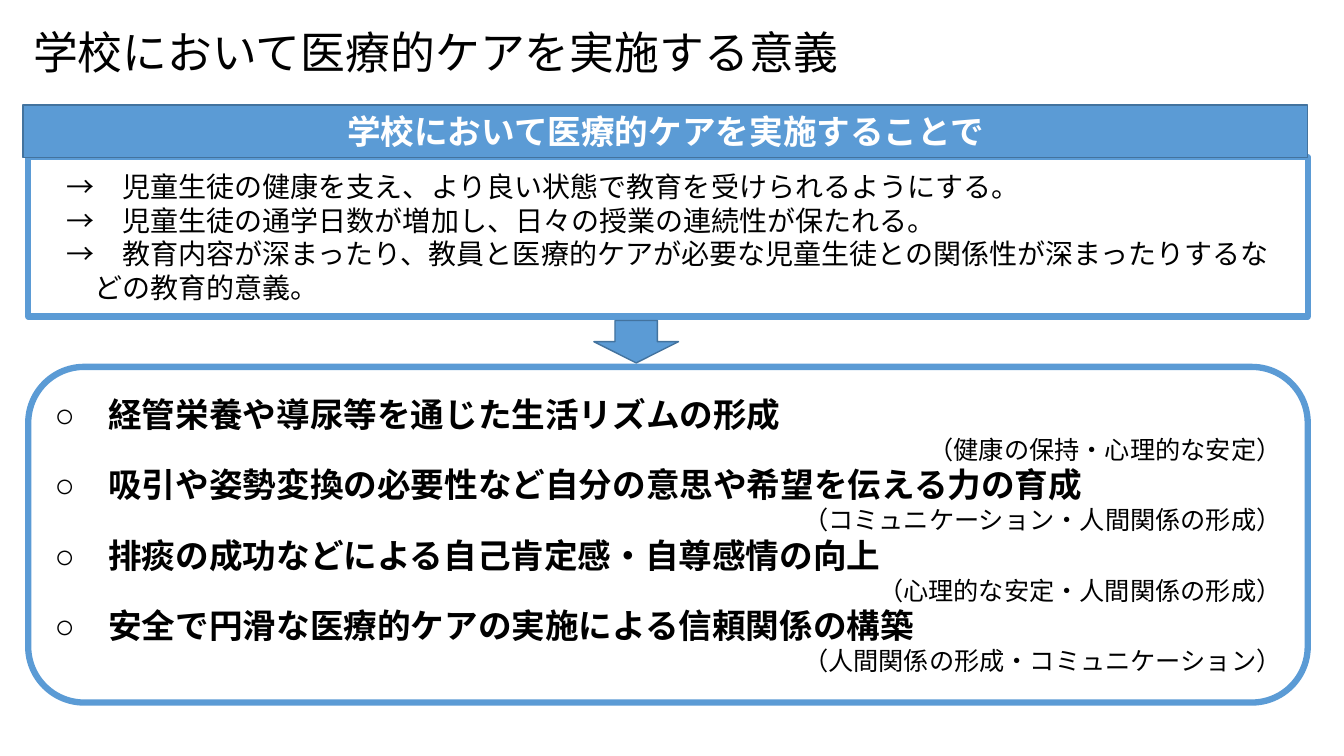
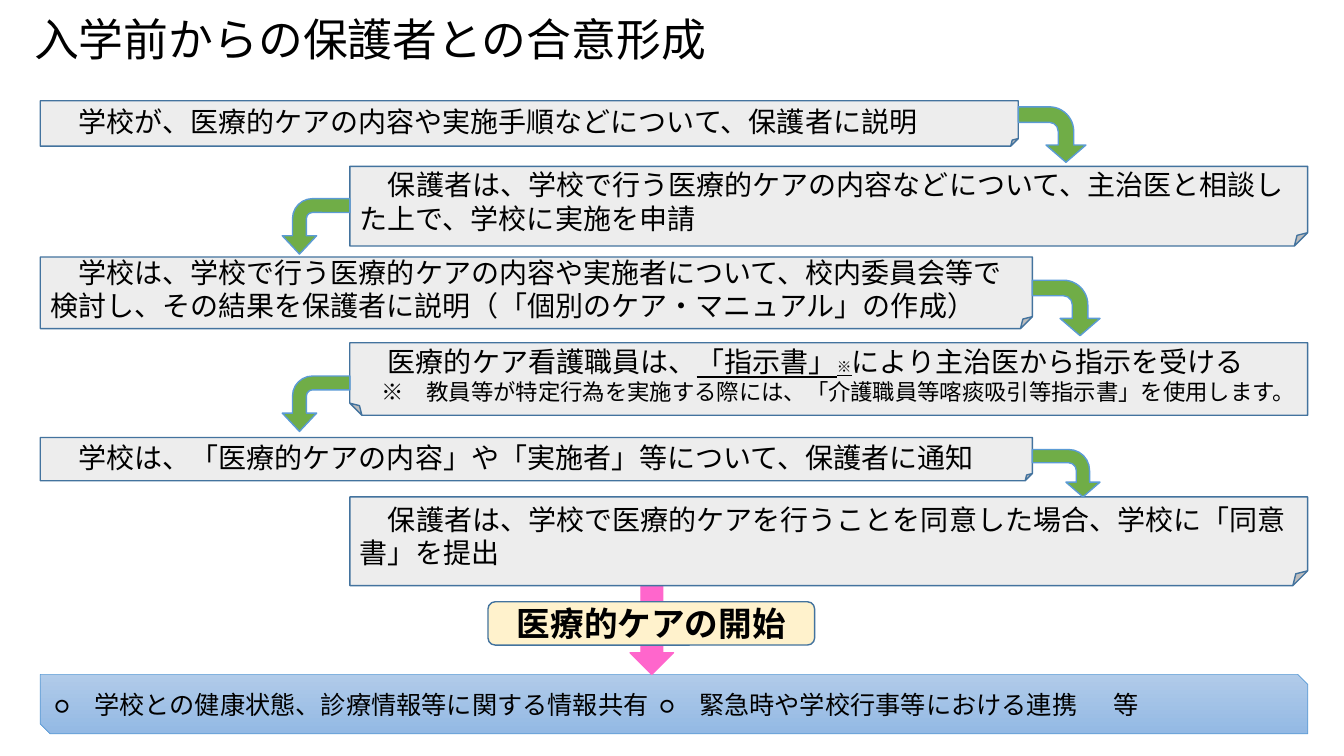
from lxml.etree import SubElement
from pptx import Presentation
from pptx.dml.color import RGBColor
from pptx.enum.shapes import MSO_SHAPE as S
from pptx.enum.text import MSO_ANCHOR, PP_ALIGN
from pptx.oxml.ns import qn
from pptx.util import Inches, Pt

HUE = {
    "ink": "000000", "white": "FFFFFF", "blue": "5B9BD5", "edge": "43739E",
    "gray": "EDEDED", "green": "70AD47", "pink": "FF66CC", "cream": "FFF2CC",
    "pale": "B1CBE9", "deep": "93B9E4",
}
NOTO, ARIAL, CALIBRI = "Noto Sans CJK JP", "Arial", "Calibri"
LEFT, CENTER, RIGHT = PP_ALIGN.LEFT, PP_ALIGN.CENTER, PP_ALIGN.RIGHT

EFFECTS = [
    "→　児童生徒の健康を支え、より良い状態で教育を受けられるようにする。",
    "→　児童生徒の通学日数が増加し、日々の授業の連続性が保たれる。",
    "→　教育内容が深まったり、教員と医療的ケアが必要な児童生徒との関係性が深まったりするなどの教育的意義。",
]
AIMS = [  # goal, area of learning, font of the area
    ("経管栄養や導尿等を通じた生活リズムの形成", "健康の保持・心理的な安定", ARIAL),
    ("吸引や姿勢変換の必要性など自分の意思や希望を伝える力の育成",
     "コミュニケーション・人間関係の形成", ARIAL),
    ("排痰の成功などによる自己肯定感・自尊感情の向上", "心理的な安定・人間関係の形成", NOTO),
    ("安全で円滑な医療的ケアの実施による信頼関係の構築",
     "人間関係の形成・コミュニケーション", NOTO),
]
ORDER = [
    ("医療的ケア看護職員は、", {}),
    ("「指示書」", {"line": True}),
    ("※", {"size": 10.5, "line": True}),
    ("により主治医から指示を受ける", {}),
]
NOTE = [
    ("※　", {"size": 16}),
    ("教員等が特定行為を実施する際には、「介護職員等喀痰吸引等指示書」を使用します。",
     {"size": 16, "font": CALIBRI}),
]
# side, top, width, height, paragraphs of runs; sides alternate school and family
STEPS = [
    ("school", 1, 9.7, 0.45, [[("学校が、医療的ケアの内容や実施手順などについて、保護者に説明", {})]]),
    ("family", 1.65, 9.5, 0.79, [[(
        "保護者は、学校で行う医療的ケアの内容などについて、主治医と相談した上で、学校に実施を申請", {})]]),
    ("school", 2.55, 9.84, 0.71, [[(
        "学校は、学校で行う医療的ケアの内容や実施者について、校内委員会等で検討し、"
        "その結果を保護者に説明（「個別のケア・マニュアル」の作成）", {})]]),
    ("family", 3.4, 9.5, 0.72, [ORDER, NOTE]),
    ("school", 4.34, 9.84, 0.43, [[(
        "学校は、「医療的ケアの内容」や「実施者」等について、保護者に通知", {})]]),
    ("family", 4.93, 9.5, 0.88, [[(
        "保護者は、学校で医療的ケアを行うことを同意した場合、学校に「同意書」を提出", {})]]),
]
EDGE = {"school": 0.4, "family": 3.47}
TURN = {"school": (0.28, 0.36, 0.31, 0.44), "family": (0.25, 0.31, 0.33, 0.36)}
BENDS = [  # side left behind, left, top, width
    ("school", 10.16, 1, 0.55), ("family", 2.86, 1.91, 0.55),
    ("school", 10.3, 2.72, 0.55), ("family", 2.86, 3.67, 0.55),
    ("school", 10.34, 4.36, 0.47),
]
SHARE = ["○　学校との健康状態、診療情報等に関する情報共有",
         "○　緊急時や学校行事等における連携", "等"]
TABS = (6.5, 11.25)


def color(name):
    return RGBColor.from_string(HUE[name])


def shape(page, kind, box, fill, edge="edge", width=1, adj=()):
    item = page.shapes.add_shape(kind, *map(Inches, box))
    item.shadow.inherit = False
    item.fill.solid()
    item.fill.fore_color.rgb = color(fill)
    item.line.color.rgb = color(edge)
    item.line.width = Pt(width)
    for i, part in enumerate(adj):
        item.adjustments[i] = part
    return item


def flip(item, axis):
    item._element.spPr.xfrm.set("flip" + axis, "1")


def frame(item, inset=(0.1, 0.05, 0.1, 0.05)):
    body = item.text_frame
    body.word_wrap = True
    body.vertical_anchor = MSO_ANCHOR.MIDDLE
    (body.margin_left, body.margin_top,
     body.margin_right, body.margin_bottom) = map(Inches, inset)
    return body


def para(body, first, align=LEFT, left=0, indent=0):
    line = body.paragraphs[0] if first else body.add_paragraph()
    line.alignment = align
    props = line._p.get_or_add_pPr()
    props.set("marL", str(Inches(left)))
    props.set("indent", str(Inches(indent)))
    return line


def run(line, text, size=20, font=NOTO, ink="ink", bold=False, under=False):
    part = line.add_run()
    part.text = text
    face = part.font
    face.size, face.name, face.bold, face.underline = Pt(size), font, bold, under
    face.color.rgb = color(ink)
    SubElement(part._r.get_or_add_rPr(), qn("a:ea")).set("typeface", font)


def title(page, text, box):
    line = para(frame(page.shapes.add_textbox(*map(Inches, box))), True)
    line.line_spacing = 0.9
    run(line, text, 32)


def label(item, text, **look):
    run(para(frame(item), True, CENTER), text, 24, bold=True, **look)


def meaning(page):
    box = shape(page, S.ROUNDED_RECTANGLE, (0.28, 1.56, 12.69, 1.58),
                "white", "blue", 4.5, [0])
    body = frame(box, (0.1, 0.05, 0.25, 0.05))
    for i, text in enumerate(EFFECTS):
        run(para(body, i == 0, left=0.56, indent=-0.28), text)

    band = shape(page, S.RECTANGLE, (0.23, 1.04, 12.74, 0.52), "blue")
    label(band, "学校において医療的ケアを実施することで", font=ARIAL, ink="white")

    body = frame(shape(page, S.ROUNDED_RECTANGLE, (0.28, 3.64, 12.69, 3.33),
                       "white", "blue", 4.5))
    for i, (goal, area, font) in enumerate(AIMS):
        run(para(body, i == 0), "○　" + goal, 24, ARIAL, bold=True)
        run(para(body, False, RIGHT), f"（{area}）", 18, font)

    title(page, "学校において医療的ケアを実施する意義", (0.23, 0.2, 11.81, 0.69))
    shape(page, S.DOWN_ARROW, (5.89, 3.18, 0.84, 0.42), "blue")


def consent(page):
    bar = shape(page, S.SNIP_2_DIAG_RECTANGLE, (0.4, 6.69, 12.57, 0.59),
                "pale", "blue", 0.5)
    bar.fill.gradient()
    bar.fill.gradient_angle = 270
    for stop, name in zip(bar.fill.gradient_stops, ("pale", "deep")):
        stop.color.rgb = color(name)
    line = para(frame(bar), True)
    stops = SubElement(line._p.get_or_add_pPr(), qn("a:tabLst"))
    for at in TABS:
        tab = SubElement(stops, qn("a:tab"))
        tab.set("pos", str(Inches(at)))
        tab.set("algn", "l")
    run(line, "\t".join(SHARE), 18, CALIBRI)

    shape(page, S.DOWN_ARROW, (6.25, 5.8, 0.43, 0.89), "pink", "pink")
    title(page, "入学前からの保護者との合意形成", (0.24, 0.01, 10, 0.81))

    for side, top, wide, high, lines in STEPS:
        card = shape(page, S.FOLDED_CORNER, (EDGE[side], top, wide, high), "gray")
        if len(lines) > 1:
            flip(card, "H")
        body = frame(card, (0.1, 0.04, 0.1, 0))
        for i, parts in enumerate(lines):
            line = para(body, i == 0, indent=0.22 if i else 0.28)
            for text, look in parts:
                run(line, text, look.get("size", 20), look.get("font", NOTO),
                    under=look.get("line", False))

    for side, left, top, wide in BENDS:
        bend = shape(page, S.BENT_ARROW, (left, top, wide, 0.67),
                     "green", "blue", adj=TURN[side])
        bend.rotation = 90
        if side == "family":
            flip(bend, "V")

    start = shape(page, S.ROUNDED_RECTANGLE, (4.84, 5.97, 3.24, 0.43), "cream")
    label(start, "医療的ケアの開始", font=CALIBRI)


def main():
    deck = Presentation()
    deck.slide_width, deck.slide_height = Inches(13.33), Inches(7.5)
    for draw in (meaning, consent):
        draw(deck.slides.add_slide(deck.slide_layouts[6]))
    deck.save("out.pptx")


if __name__ == "__main__":
    main()
